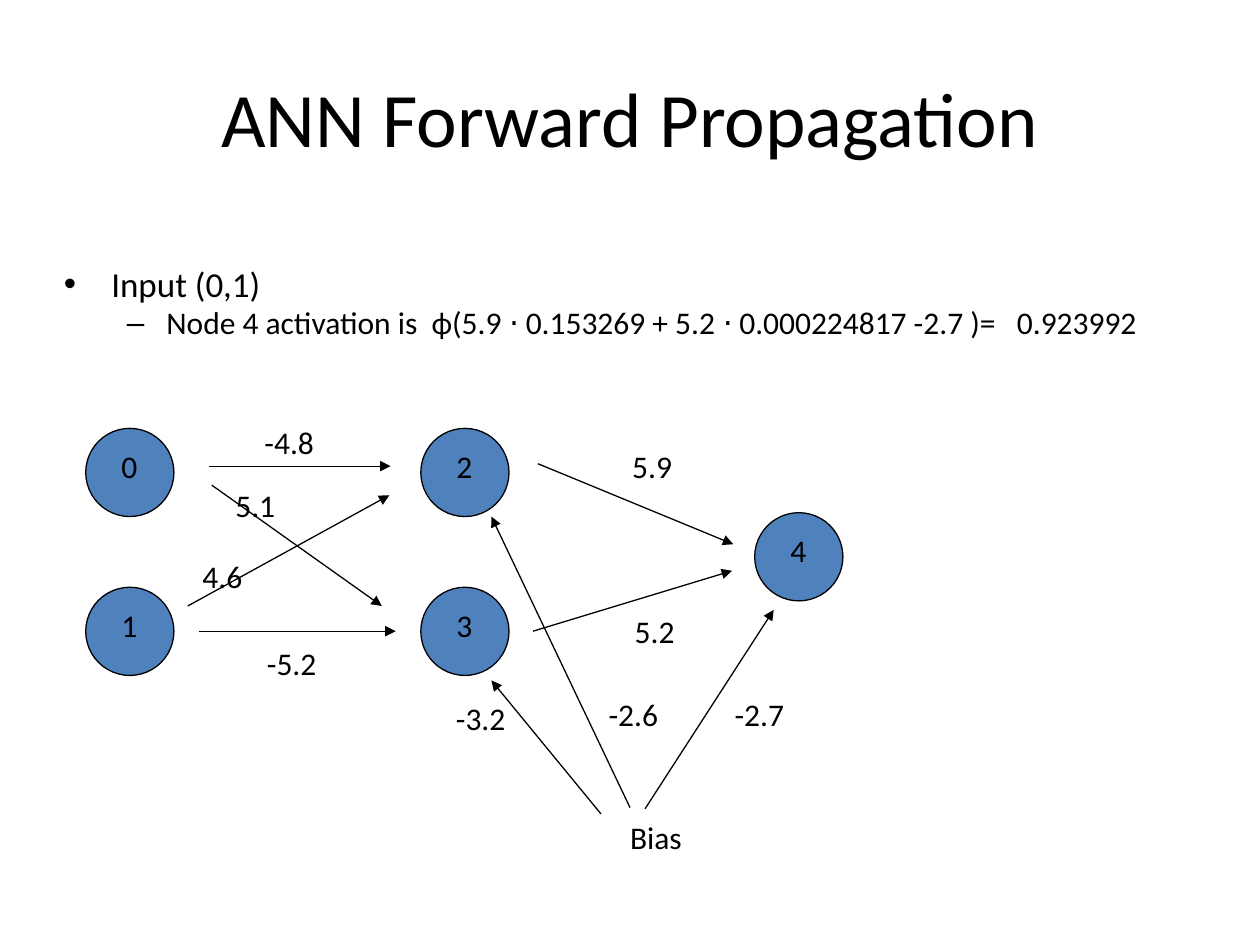
import dataclasses
import typing

import lxml.etree
import pptx
import pptx.dml.color
import pptx.enum.shapes
import pptx.enum.text
import pptx.oxml.ns
import pptx.util

Pt = pptx.util.Pt
qn = pptx.oxml.ns.qn
Align = pptx.enum.text.PP_ALIGN
Anchor = pptx.enum.text.MSO_ANCHOR


@dataclasses.dataclass(frozen=True)
class Theme:
    font: str = "Calibri"
    ink: str = "000000"
    node: str = "4F81BD"
    title: float = 44
    bullet: float = 20
    body: float = 18
    line: float = 0.75


class Node(typing.NamedTuple):
    text: str
    x: float
    y: float


class Label(typing.NamedTuple):
    text: str
    x: float
    y: float
    w: float = 85.7


class Arrow(typing.NamedTuple):
    x1: float
    y1: float
    x2: float
    y2: float


class Bullet(typing.NamedTuple):
    text: str
    size: float
    char: str
    margin: float
    hang: float


THEME = Theme()
NODE_SIZE = 50.4
TEXT_H = 28.8
INPUT_X, HIDDEN_X, OUTPUT_X = 49, 240.5, 431.3
TOP_Y, BOTTOM_Y = 244.8, 335.6

NODES = [
    Node("0", INPUT_X, TOP_Y),
    Node("1", INPUT_X, BOTTOM_Y),
    Node("2", HIDDEN_X, TOP_Y),
    Node("3", HIDDEN_X, BOTTOM_Y),
    Node("4", OUTPUT_X, 293),
]
ARROWS = [
    Arrow(119.5, 266.4, 223.2, 266.4),
    Arrow(113.8, 360.7, 226.1, 360.7),
    Arrow(107.3, 346.3, 222.5, 283),
    Arrow(121, 277.2, 218.2, 346.3),
    Arrow(307.4, 265, 419, 311),
    Arrow(304.6, 360.7, 418.3, 326.2),
    Arrow(343.4, 465.1, 280.8, 388.8),
    Arrow(360, 461.5, 280.8, 295.2),
    Arrow(368.6, 462.2, 442.1, 348.5),
]
LABELS = [
    Label("-4.8", 122.4, 238.3),
    Label("-5.2", 123.8, 364.3),
    Label("4.6", 84.2, 314.6),
    Label("5.1", 103, 274.3),
    Label("5.9", 329.8, 252),
    Label("5.2", 331.2, 346.3),
    Label("-2.7", 391, 393.8),
    Label("-2.6", 319, 393.8),
    Label("-3.2", 231.8, 396),
    Label("Bias", 326.2, 463.7, 97.2),
]
BULLETS = [
    Bullet("Input (0,1)", THEME.bullet, "•", 27, 27),
    Bullet(
        "Node 4 activation is  ϕ(5.9 ⋅ 0.153269 + 5.2 ⋅ 0.000224817 -2.7 )=   0.923992",
        THEME.body, "–", 58.5, 22.5,
    ),
]


def rgb(color: str) -> pptx.dml.color.RGBColor:
    return pptx.dml.color.RGBColor.from_string(color)


def write(p, text: str, *, size: float = THEME.body, align=Align.CENTER) -> None:
    p.alignment = align
    r = p.add_run()
    r.text = text
    r.font.name = THEME.font
    r.font.size = Pt(size)
    r.font.color.rgb = rgb(THEME.ink)


def add_frame(shapes, x: float, y: float, w: float, h: float, anchor=Anchor.TOP):
    tf = shapes.add_textbox(Pt(x), Pt(y), Pt(w), Pt(h)).text_frame
    tf.word_wrap = True
    tf.vertical_anchor = anchor
    return tf


def add_label(shapes, label: Label) -> None:
    tf = add_frame(shapes, label.x, label.y, label.w, TEXT_H)
    write(tf.paragraphs[0], label.text)


def add_node(shapes, node: Node) -> None:
    group = shapes.add_group_shape()
    sp = group.shapes.add_shape(
        pptx.enum.shapes.MSO_SHAPE.OVAL,
        Pt(node.x), Pt(node.y), Pt(NODE_SIZE), Pt(NODE_SIZE),
    )
    sp.shadow.inherit = False
    sp.fill.solid()
    sp.fill.fore_color.rgb = rgb(THEME.node)
    sp.line.color.rgb = rgb(THEME.ink)
    sp.line.width = Pt(THEME.line)
    add_label(group.shapes, Label(node.text, node.x + 7.2, node.y + 6.9, 35.3))


def add_arrow(shapes, arrow: Arrow) -> None:
    cxn = shapes.add_connector(
        pptx.enum.shapes.MSO_CONNECTOR.STRAIGHT, *(Pt(v) for v in arrow)
    )
    cxn.line.color.rgb = rgb(THEME.ink)
    cxn.line.width = Pt(THEME.line)
    ln = cxn.line._get_or_add_ln()
    lxml.etree.SubElement(ln, qn("a:tailEnd"), type="triangle")
    lxml.etree.SubElement(cxn._element.spPr, qn("a:effectLst"))


def add_bullets(shapes, bullets: list[Bullet]) -> None:
    tf = add_frame(shapes, 29.5, 151.2, 648, 73.4)
    for i, bullet in enumerate(bullets):
        p = tf.add_paragraph() if i else tf.paragraphs[0]
        p.level = i
        p.line_spacing = 0.8
        p.space_before = Pt(bullet.size * 0.2)
        write(p, bullet.text, size=bullet.size, align=Align.LEFT)
        pPr = p._p.get_or_add_pPr()
        pPr.set("marL", str(Pt(bullet.margin)))
        pPr.set("indent", str(-Pt(bullet.hang)))
        lxml.etree.SubElement(pPr, qn("a:buFont"), typeface="Arial")
        lxml.etree.SubElement(pPr, qn("a:buChar"), char=bullet.char)


def main() -> None:
    prs = pptx.Presentation()
    prs.slide_width, prs.slide_height = Pt(720), Pt(540)
    s = prs.slides.add_slide(prs.slide_layouts[6])

    tf = add_frame(s.shapes, 36, 21.6, 648, 90, Anchor.MIDDLE)
    write(tf.paragraphs[0], "ANN Forward Propagation", size=THEME.title)
    add_bullets(s.shapes, BULLETS)
    for node in NODES:
        add_node(s.shapes, node)
    for arrow in ARROWS:
        add_arrow(s.shapes, arrow)
    for label in LABELS:
        add_label(s.shapes, label)

    prs.save("out.pptx")


if __name__ == "__main__":
    main()
